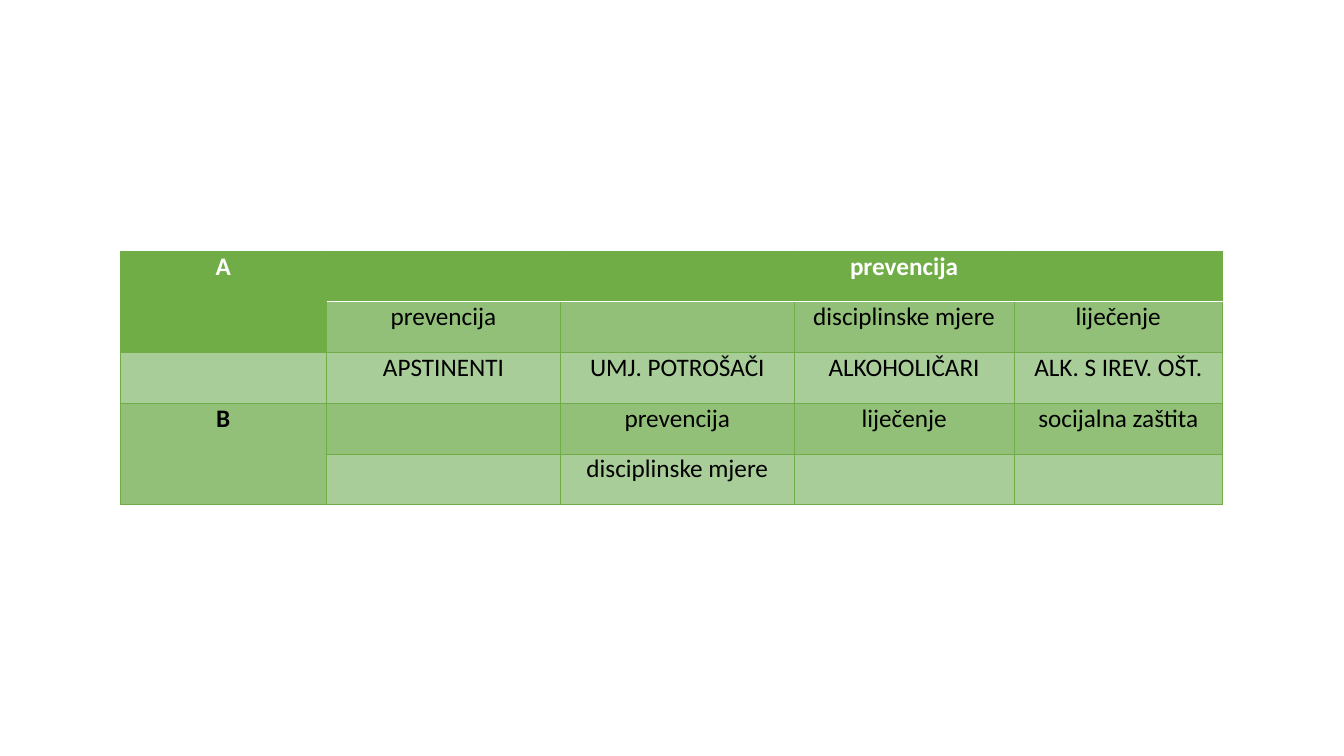
"""Build a slide with the table of measures for groups of alcohol users."""
from dataclasses import dataclass

from lxml.etree import SubElement
from pptx import Presentation
from pptx.dml.color import RGBColor
from pptx.enum.text import MSO_ANCHOR, PP_ALIGN as Align
from pptx.oxml import parse_xml
from pptx.oxml.ns import nsdecls, qn
from pptx.table import _Cell as Cell
from pptx.util import Pt


@dataclass(frozen=True)
class Theme:
    """Colours, font and sizes of the slide."""
    green: str = "70AD47"
    dark_band: str = "92C078"
    light_band: str = "A9CD99"
    white: str = "FFFFFF"
    black: str = "000000"
    font: str = "Calibri"
    size: float = 18
    thin: float = 0.5
    thick: float = 1


@dataclass(frozen=True)
class Measures:
    """One row of the table."""
    fill: str
    texts: tuple[str, str, str, str, str]


@dataclass(frozen=True)
class Edge:
    """Colour and width of a cell border."""
    color: str
    width: float


THEME = Theme()
ROWS = (
    Measures(THEME.green, ("A", "", "", "prevencija", "")),
    Measures(THEME.dark_band, ("", "prevencija", "", "disciplinske mjere", "liječenje")),
    Measures(THEME.light_band, ("", "APSTINENTI", "UMJ. POTROŠAČI", "ALKOHOLIČARI", "ALK. S IREV. OŠT.")),
    Measures(THEME.dark_band, ("B", "", "prevencija", "liječenje", "socijalna zaštita")),
    Measures(THEME.light_band, ("", "", "disciplinske mjere", "", "")),
)
GROUP_STARTS = (0, 3)
COLUMN_WIDTHS = (147.6, 167.04, 167.04, 156.96, 149.04)
ROW_HEIGHT = 36.25
LEFT, TOP = 85.68, 179.28


def write(cell: Cell, text: str, *, color: str, bold: bool) -> None:
    """Put centred text at the top of a cell."""
    cell.margin_left = cell.margin_right = Pt(5)
    cell.margin_top = cell.margin_bottom = Pt(0)
    cell.vertical_anchor = MSO_ANCHOR.TOP
    paragraph = cell.text_frame.paragraphs[0]
    paragraph.alignment = Align.CENTER
    paragraph.font.size = Pt(THEME.size)
    if text:
        run = paragraph.add_run()
        run.text = text
        run.font.name = THEME.font
        run.font.size = Pt(THEME.size)
        run.font.bold = bold
        run.font.color.rgb = RGBColor.from_string(color)


def cell_edges(row: int, column: int) -> dict[str, Edge]:
    """Choose the four borders of a cell."""
    thin = Edge(THEME.green, THEME.thin)
    edges = dict.fromkeys(("lnL", "lnR", "lnT", "lnB"), thin)
    if column and row < 2:
        edges["lnT" if row else "lnB"] = Edge(THEME.white, THEME.thick)
    if column < 2 and row:
        edges["lnL" if column else "lnR"] = Edge(THEME.green, THEME.thick)
    return edges


def draw_edges(cell: Cell, edges: dict[str, Edge]) -> None:
    """Add borders ahead of the fill of a cell."""
    properties = cell._tc.get_or_add_tcPr()
    for position, (side, edge) in enumerate(edges.items()):
        line = parse_xml(f'<a:{side} {nsdecls("a")} w="{Pt(edge.width)}"/>')
        fill = SubElement(line, qn("a:solidFill"))
        SubElement(fill, qn("a:srgbClr"), val=edge.color)
        properties.insert(position, line)


def main() -> None:
    """Create the slide and save it."""
    deck = Presentation()
    deck.slide_width, deck.slide_height = Pt(960), Pt(540)
    slide = deck.slides.add_slide(deck.slide_layouts[6])
    table = slide.shapes.add_table(
        len(ROWS), len(COLUMN_WIDTHS), Pt(LEFT), Pt(TOP),
        Pt(sum(COLUMN_WIDTHS)), Pt(ROW_HEIGHT * len(ROWS)),
    ).table
    table.first_row = table.horz_banding = False
    for column, width in zip(table.columns, COLUMN_WIDTHS):
        column.width = Pt(width)
    for row, measures in enumerate(ROWS):
        table.rows[row].height = Pt(ROW_HEIGHT)
        for column, text in enumerate(measures.texts):
            cell = table.cell(row, column)
            header = row == 0
            write(cell, text, color=THEME.white if header else THEME.black,
                  bold=header or column == 0)
            cell.fill.solid()
            cell.fill.fore_color.rgb = RGBColor.from_string(measures.fill)
            draw_edges(cell, cell_edges(row, column))
    for start in GROUP_STARTS:
        table.cell(start, 0).merge(table.cell(start + 1, 0))
    deck.save("out.pptx")


if __name__ == "__main__":
    main()
